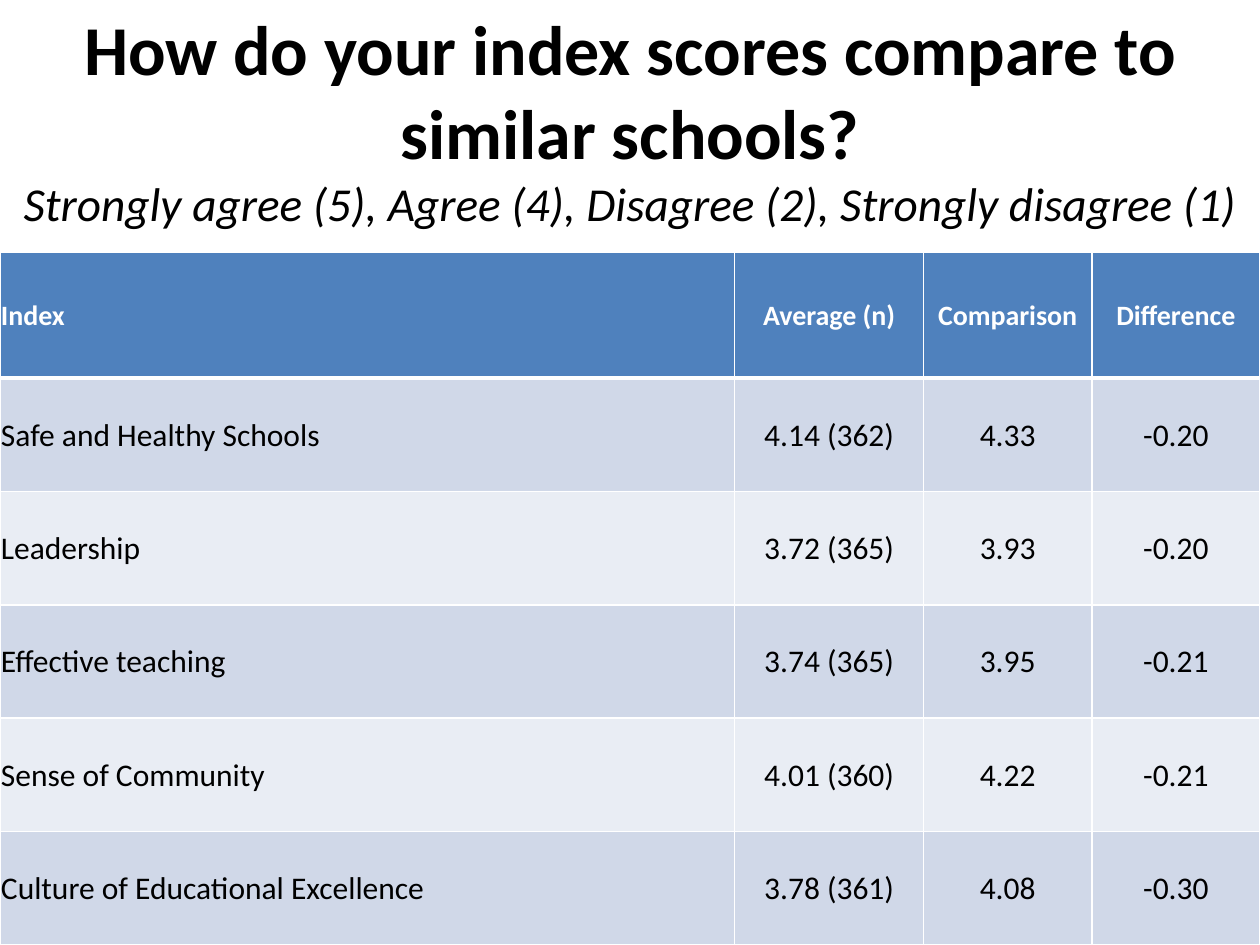
from copy import deepcopy

from lxml.etree import SubElement
from pptx import Presentation
from pptx.dml.color import RGBColor
from pptx.enum.text import MSO_ANCHOR, MSO_AUTO_SIZE, PP_ALIGN
from pptx.oxml.ns import qn
from pptx.util import Cm, Pt

WIDTH, HEIGHT = 25.4, 19.05
FONT = "Calibri"
BLACK, WHITE = "000000", "FFFFFF"
HEADER_FILL, BAND_FILLS = "4F81BD", ("D0D8E8", "E9EDF4")

HEADING = "How do your index scores compare to similar schools?"
SCALE = "Strongly agree (5), Agree (4), Disagree (2), Strongly disagree (1)"
SCORES = [
    ("Index", "Average (n)", "Comparison", "Difference"),
    ("Safe and Healthy Schools", "4.14 (362)", "4.33", "-0.20"),
    ("Leadership", "3.72 (365)", "3.93", "-0.20"),
    ("Effective teaching", "3.74 (365)", "3.95", "-0.21"),
    ("Sense of Community", "4.01 (360)", "4.22", "-0.21"),
    ("Culture of Educational Excellence", "3.78 (361)", "4.08", "-0.30"),
]
COLUMN_WIDTHS = (14.81, 3.81, 3.39, 3.39)
HEADER_HEIGHT = 2.54


def color(hex_string):
    return RGBColor.from_string(hex_string)


def set_all(target, values):
    for name, value in values.items():
        setattr(target, name, value)


def add_span(para, text, size, ink, bold=False, italic=False):
    span = para.add_run()
    span.text = text
    set_all(span.font, {"name": FONT, "size": Pt(size), "bold": bold, "italic": italic})
    span.font.color.rgb = color(ink)
    return span


def place_title(page, left, top, width, height):
    title = page.shapes.title
    set_all(title, {"left": Cm(left), "top": Cm(top), "width": Cm(width), "height": Cm(height)})
    frame = title.text_frame
    set_all(frame, {"word_wrap": True, "auto_size": MSO_AUTO_SIZE.NONE,
                    "vertical_anchor": MSO_ANCHOR.MIDDLE})
    para = frame.paragraphs[0]
    para.alignment = PP_ALIGN.CENTER
    heading = add_span(para, HEADING, 40, BLACK, bold=True)
    para.add_line_break()
    # The break takes the heading's size, so it does not stretch its line.
    para._p[-1].append(deepcopy(heading._r.rPr))
    add_span(para, SCALE, 27, BLACK, italic=True)


def set_borders(cell, widths):
    """Draw white borders; widths maps the sides L, R, T, B, in that order, to points."""
    properties = cell._tc.get_or_add_tcPr()
    for position, (side, width) in enumerate(widths.items()):
        line = SubElement(properties, qn(f"a:ln{side}"), w=str(Pt(width)))
        fill = SubElement(line, qn("a:solidFill"))
        SubElement(fill, qn("a:srgbClr"), val=WHITE)
        properties.insert(position, line)


def fill_cell(cell, text, row, column):
    is_header = row == 0
    set_all(cell, {"margin_left": Cm(0.02), "margin_right": Cm(0.02), "margin_top": Cm(0.02),
                   "margin_bottom": 0, "vertical_anchor": MSO_ANCHOR.MIDDLE})
    cell.fill.solid()
    cell.fill.fore_color.rgb = color(HEADER_FILL if is_header else BAND_FILLS[(row - 1) % 2])
    set_borders(cell, {"L": 1, "R": 1, "T": 3 if row == 1 else 1, "B": 3 if is_header else 1})
    para = cell.text_frame.paragraphs[0]
    para.alignment = PP_ALIGN.CENTER if column else PP_ALIGN.LEFT
    add_span(para, text, 16 if is_header else 18, WHITE if is_header else BLACK, bold=is_header)


def place_scores(page, left, top, width, height):
    table = page.shapes.add_table(len(SCORES), len(COLUMN_WIDTHS), Cm(left), Cm(top),
                                  Cm(width), Cm(height)).table
    for column, share in zip(table.columns, COLUMN_WIDTHS):
        column.width = Cm(width * share / sum(COLUMN_WIDTHS))
    body_height = (height - HEADER_HEIGHT) / (len(SCORES) - 1)
    for row, texts in enumerate(SCORES):
        table.rows[row].height = Cm(body_height if row else HEADER_HEIGHT)
        for column, text in enumerate(texts):
            fill_cell(table.cell(row, column), text, row, column)


def main():
    deck = Presentation()
    set_all(deck, {"slide_width": Cm(WIDTH), "slide_height": Cm(HEIGHT)})
    page = deck.slides.add_slide(deck.slide_layouts.get_by_name("Title Only"))
    place_title(page, 0, 0.76, WIDTH, 3.25)
    table_top = 5.08
    place_scores(page, 0, table_top, WIDTH, HEIGHT - table_top)
    deck.save("out.pptx")


if __name__ == "__main__":
    main()
